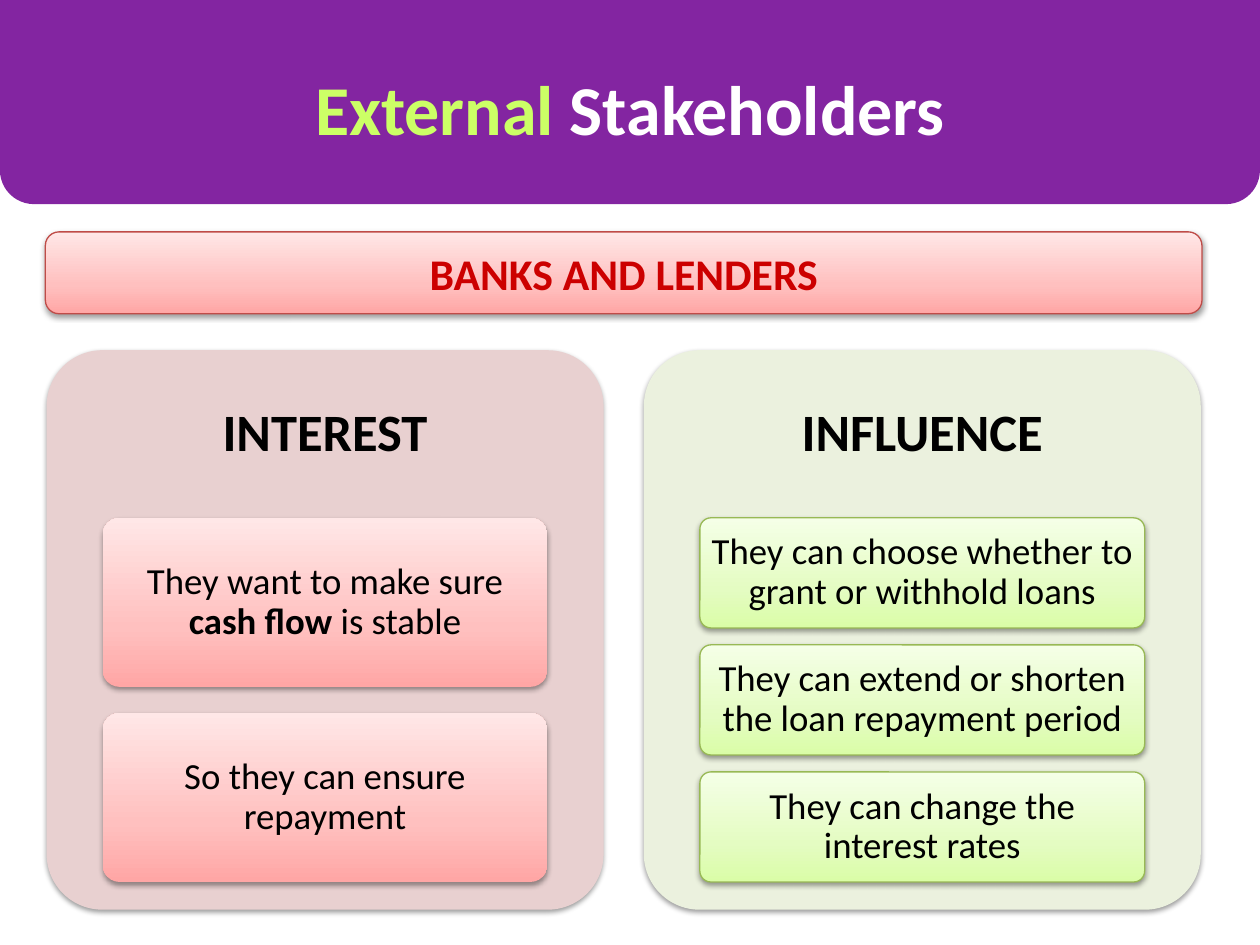
"""Build a slide on the interest and influence of banks and lenders."""
from copy import deepcopy
from dataclasses import dataclass
from typing import NamedTuple, Optional

from lxml.etree import SubElement as Sub
from pptx import Presentation
from pptx.dml.color import RGBColor as Rgb
from pptx.enum.shapes import MSO_SHAPE as Kind
from pptx.enum.text import MSO_ANCHOR as Anchor, PP_ALIGN as Align
from pptx.oxml.ns import qn
from pptx.util import Inches, Pt

HUES = {
    "purple": "8325A1", "lime": "CCFF66", "white": "FFFFFF", "black": "000000",
    "red": "CC0000", "edge": "BF4C48", "rose": "E8D0D0", "sage": "EBF1DE",
    "leaf": "98B955",
}
PINK = ((0, "FFA6A5"), (0.35, "FFC0BF"), (1, "FFE7E7"))
GREEN = ((0, "DAFDA7"), (0.35, "E4FCC2"), (1, "F5FFE7"))
TOP, SPAN, RATIO = 4.11, 2.89, 0.154


class Box(NamedTuple):
    left: float
    top: float
    width: float
    height: float


class Part(NamedTuple):
    text: str
    hue: str = "black"
    bold: bool = False


@dataclass
class Panel:
    left: float
    head: str
    hue: str
    fade: tuple
    line: Optional[str]
    cards: list[list[Part]]


PANELS = [
    Panel(0.37, "INTEREST", "rose", PINK, None, [
        [Part("They want to make sure "), Part("cash flow ", bold=True),
         Part("is stable")],
        [Part("So they can ensure repayment")],
    ]),
    Panel(5.11, "INFLUENCE", "sage", GREEN, "leaf", [
        [Part("They can choose whether to grant or withhold loans")],
        [Part("They can extend or shorten the loan repayment period")],
        [Part("They can change the interest rates")],
    ]),
]


def tint(name: str) -> Rgb:
    """Return a named colour."""
    return Rgb.from_string(HUES[name])


def place(box: Box) -> list[int]:
    """Turn a box into lengths."""
    return [Inches(side) for side in box]


def shade(shape) -> None:
    """Give a shape a soft shadow below it."""
    glow = Sub(shape._element.spPr.find(qn("a:effectLst")), qn("a:outerShdw"),
               blurRad=str(Pt(3.1)), dist=str(Pt(1.6)), dir="5400000",
               rotWithShape="0")
    ink = Sub(glow, qn("a:srgbClr"), val=HUES["black"])
    Sub(ink, qn("a:alpha"), val="38000")


def blend(shape, fade: tuple) -> None:
    """Fill a shape with a three-stop upward gradient."""
    shape.fill.gradient()
    shape.fill.gradient_angle = 90
    stops = shape._element.spPr.find(".//" + qn("a:gsLst"))
    stops.append(deepcopy(stops[0]))
    for stop, (spot, hue) in zip(shape.fill.gradient_stops, fade):
        stop.position = spot
        stop.color.rgb = Rgb.from_string(hue)


def draw(slide, kind: Kind, box: Box, hue: Optional[str] = None,
         fade: tuple = (), line: Optional[str] = None,
         curve: Optional[float] = None, cast: bool = True):
    """Draw a filled shape."""
    shape = slide.shapes.add_shape(kind, *place(box))
    shape.shadow.inherit = False
    if curve is not None:
        shape.adjustments[0] = curve
    if fade:
        blend(shape, fade)
    else:
        shape.fill.solid()
        shape.fill.fore_color.rgb = tint(hue)
    if line:
        shape.line.color.rgb = tint(line)
        shape.line.width = Pt(0.75)
    else:
        shape.line.fill.background()
    if cast:
        shade(shape)
    return shape


def write(shape, parts: list[Part], size: float, pad: tuple = (0.1, 0.05),
          space: float = 1.0) -> None:
    """Write centred text into a shape."""
    frame = shape.text_frame
    frame.word_wrap = True
    frame.vertical_anchor = Anchor.MIDDLE
    frame.margin_left = frame.margin_right = Inches(pad[0])
    frame.margin_top = frame.margin_bottom = Inches(pad[1])
    para = frame.paragraphs[0]
    para.alignment = Align.CENTER
    para.line_spacing = space
    for part in parts:
        run = para.add_run()
        run.text = part.text
        run.font.name = "Calibri"
        run.font.size = Pt(size)
        run.font.bold = part.bold
        run.font.color.rgb = tint(part.hue)


def build(slide, panel: Panel) -> None:
    """Draw a panel with its heading and cards."""
    draw(slide, Kind.ROUNDED_RECTANGLE, Box(panel.left, 2.78, 4.42, 4.44),
         panel.hue, curve=0.1)
    head = slide.shapes.add_textbox(*place(Box(panel.left, 2.78, 4.42, 1.33)))
    write(head, [Part(panel.head, bold=True)], 30, (0.12, 0.12), 0.9)
    count = len(panel.cards)
    height = SPAN / (count + (count - 1) * RATIO)
    for row, parts in enumerate(panel.cards):
        top = TOP + row * height * (1 + RATIO)
        card = draw(slide, Kind.ROUNDED_RECTANGLE,
                    Box(panel.left + 0.445, top, 3.53, height),
                    fade=panel.fade, line=panel.line, curve=0.1)
        write(card, parts, 21, (0.06, 0.04), 0.9)


def main() -> None:
    """Build and save the slide."""
    deck = Presentation()
    deck.slide_width, deck.slide_height = Inches(10), Inches(7.5)
    slide = deck.slides.add_slide(deck.slide_layouts[5])
    banner = draw(slide, Kind.ROUNDED_RECTANGLE, Box(0.36, 1.84, 9.18, 0.65),
                  fade=PINK, line="edge")
    write(banner, [Part("BANKS AND LENDERS", "red", True)], 25)
    for panel in PANELS:
        build(slide, panel)
    draw(slide, Kind.ROUNDED_RECTANGLE, Box(0, 0, 10, 1.62), "purple",
         cast=False)
    draw(slide, Kind.RECTANGLE, Box(0, 0, 10, 1.15), "purple", cast=False)
    title = slide.shapes.title
    title.left, title.top, title.width, title.height = place(
        Box(0, 0.47, 10, 0.77))
    write(title, [Part("External ", "lime", True),
                  Part("Stakeholders", "white", True)], 40)
    slide.shapes._spTree.append(title._element)
    deck.save("out.pptx")


if __name__ == "__main__":
    main()
